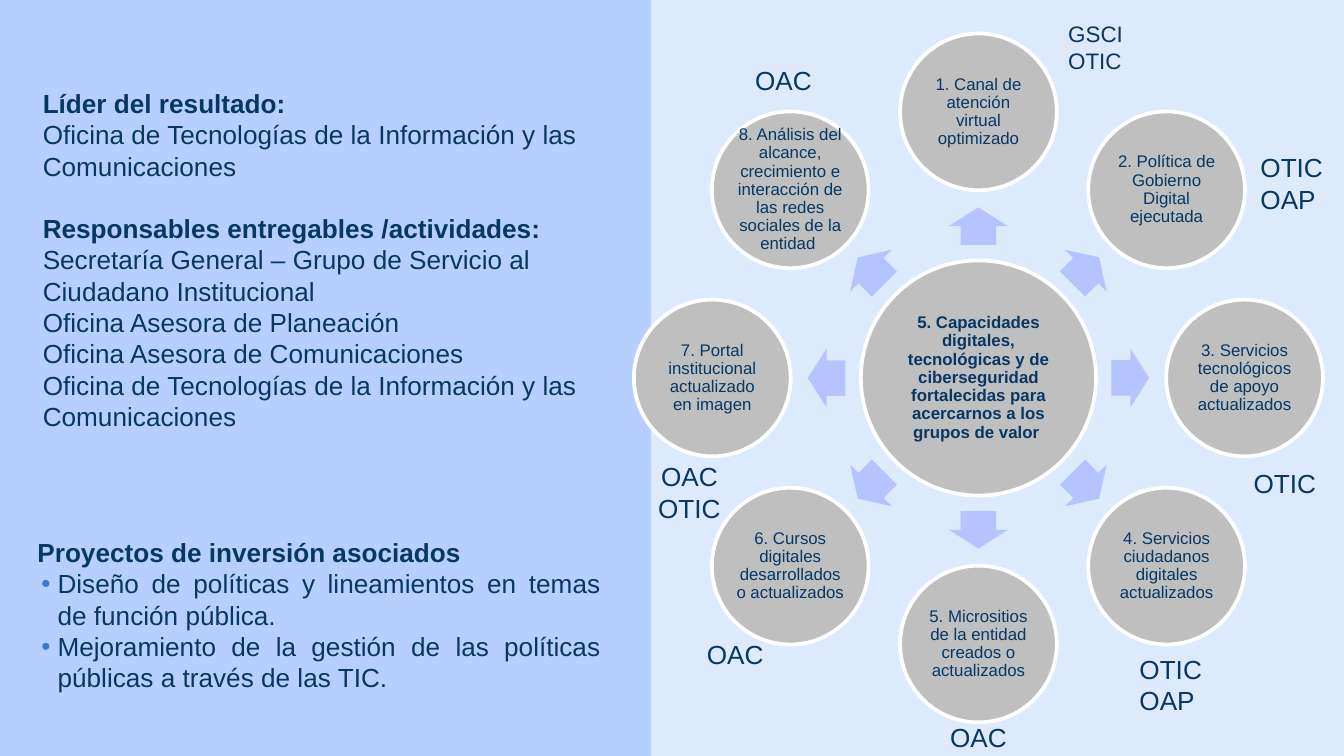
from math import cos, radians, sin

from lxml.etree import SubElement
from pptx import Presentation
from pptx.dml.color import RGBColor
from pptx.enum.shapes import MSO_SHAPE
from pptx.enum.text import MSO_ANCHOR, PP_ALIGN
from pptx.oxml.ns import qn
from pptx.util import Inches, Pt

NAVY = "073763"


def color(value):
    return RGBColor.from_string(value)


def write(tf, lines, size=14, bold=False, align=PP_ALIGN.LEFT,
          spacing=1.0, before=0, bullet=None):
    """Append each line as a paragraph; 'before' applies to the first one."""
    tf.word_wrap = True
    for i, line in enumerate(lines):
        p = tf.paragraphs[0]
        if p.runs:
            p = tf.add_paragraph()
        if bullet:
            pPr = p._p.get_or_add_pPr()
            pPr.set("marL", str(Inches(0.15)))
            pPr.set("indent", str(Inches(-0.12)))
            clr = SubElement(pPr, qn("a:buClr"))
            SubElement(clr, qn("a:srgbClr"), val=bullet)
            SubElement(pPr, qn("a:buFont"), typeface="Arial")
            SubElement(pPr, qn("a:buChar"), char="•")
        p.alignment = align
        p.line_spacing = spacing
        if i == 0 and before:
            p.space_before = Pt(before)
        r = p.add_run()
        r.text = line
        r.font.name = "Arial"
        r.font.size = Pt(size)
        r.font.bold = bold
        r.font.color.rgb = color(NAVY)


# 16:9 slide
prs = Presentation()
prs.slide_width = Inches(10)
prs.slide_height = Inches(10 * 9 / 16)
s = prs.slides.add_slide(prs.slide_layouts[6])
s.background.fill.solid()
s.background.fill.fore_color.rgb = color("DCEAFB")

# Left panel
sp = s.shapes.add_shape(MSO_SHAPE.RECTANGLE, Inches(-0.01), 0,
                        Inches(4.84), prs.slide_height)
sp.shadow.inherit = False
sp.fill.solid()
sp.fill.fore_color.rgb = color("B7CFFF")
sp.line.color.rgb = color("B7CFFF")
sp.line.width = Pt(2)

# Radial diagram: a hub, then one circle every 45 degrees from the top
CX, CY = 7.28, 10 * 9 / 32
RING, ARROW_RING = 1.98, 1.13
HUB = 1.75
NODE = HUB * 2 / 3
hub_text = ("5. Capacidades digitales, tecnológicas y de ciberseguridad "
            "fortalecidas para acercarnos a los grupos de valor ")
results = [
    "1. Canal de atención virtual optimizado",
    "2. Política de Gobierno Digital ejecutada",
    "3. Servicios tecnológicos de apoyo actualizados",
    "4. Servicios ciudadanos digitales actualizados",
    "5. Micrositios de la entidad creados o actualizados",
    "6. Cursos digitales desarrollados o actualizados",
    "7. Portal institucional actualizado en imagen",
    "8. Análisis del alcance, crecimiento e interacción de las redes "
    "sociales de la entidad ",
]
circles = [(CX, CY, HUB, hub_text, True)]
for i, text in enumerate(results):
    angle = 45 * i - 90
    dx, dy = cos(radians(angle)), sin(radians(angle))
    circles.append((CX + RING * dx, CY + RING * dy, NODE, text, False))

    # Arrow from the hub to the circle
    sp = s.shapes.add_shape(MSO_SHAPE.RIGHT_ARROW,
                            Inches(CX + ARROW_RING * dx - 0.14),
                            Inches(CY + ARROW_RING * dy - 0.22),
                            Inches(0.28), Inches(0.44))
    sp.adjustments[0], sp.adjustments[1] = 0.6, 0.5
    sp.rotation = angle % 360
    sp.shadow.inherit = False
    sp.fill.solid()
    sp.fill.fore_color.rgb = color("B5C4FF")
    sp.line.fill.background()

for x, y, d, text, bold in circles:
    sp = s.shapes.add_shape(MSO_SHAPE.OVAL, Inches(x - d / 2),
                            Inches(y - d / 2), Inches(d), Inches(d))
    sp.shadow.inherit = False
    sp.fill.solid()
    sp.fill.fore_color.rgb = color("BFBFBF")
    sp.line.color.rgb = color("FFFFFF")
    sp.line.width = Pt(2)
    tf = sp.text_frame
    tf.margin_left = tf.margin_right = Pt(0.9)
    tf.margin_top = tf.margin_bottom = Pt(0.9)
    tf.vertical_anchor = MSO_ANCHOR.MIDDLE
    write(tf, [text], size=9, bold=bold, align=PP_ALIGN.CENTER, spacing=0.9)

# Leader and responsible offices
tf = s.shapes.add_textbox(Inches(0.22), Inches(0.6),
                          Inches(4.64), Inches(2.93)).text_frame
office = "Oficina de Tecnologías de la Información y las Comunicaciones"
write(tf, ["Líder del resultado:"], bold=True)
write(tf, [office])
write(tf, ["Responsables entregables /actividades:"], bold=True, before=16.5)
write(tf, ["Secretaría General – Grupo de Servicio al Ciudadano Institucional",
           "Oficina Asesora de Planeación",
           "Oficina Asesora de Comunicaciones",
           office])

# Investment projects
tf = s.shapes.add_textbox(Inches(0.18), Inches(3.94),
                          Inches(4.39), Inches(1.28)).text_frame
write(tf, ["Proyectos de inversión asociados"], bold=True)
write(tf, ["Diseño de políticas y lineamientos en temas de función pública.",
           "Mejoramiento de la gestión de las políticas públicas a través "
           "de las TIC."],
      align=PP_ALIGN.JUSTIFY, bullet="3C78D8")

# Office labels around the diagram: left, top, width, size, alignment, lines
LEFT, CENTER = PP_ALIGN.LEFT, PP_ALIGN.CENTER
labels = [
    (7.85, 0.1, 1.53, 12, LEFT, ["GSCI", "OTIC"]),
    (9.28, 1.08, 0.9, 14, LEFT, ["OTIC", "OAP"]),
    (9.11, 3.43, 0.9, 14, CENTER, ["OTIC"]),
    (8.38, 4.81, 0.9, 14, LEFT, ["OTIC", "OAP"]),
    (6.83, 5.32, 0.9, 14, CENTER, ["OAC"]),
    (5.02, 4.7, 0.9, 14, CENTER, ["OAC"]),
    (4.68, 3.38, 0.9, 14, CENTER, ["OAC", "OTIC"]),
    (5.38, 0.43, 0.9, 14, CENTER, ["OAC"]),
]
for x, y, w, size, align, lines in labels:
    h = 0.1 + len(lines) * size / 60
    tf = s.shapes.add_textbox(Inches(x), Inches(y),
                              Inches(w), Inches(h)).text_frame
    write(tf, lines, size=size, align=align)

prs.save("out.pptx")
